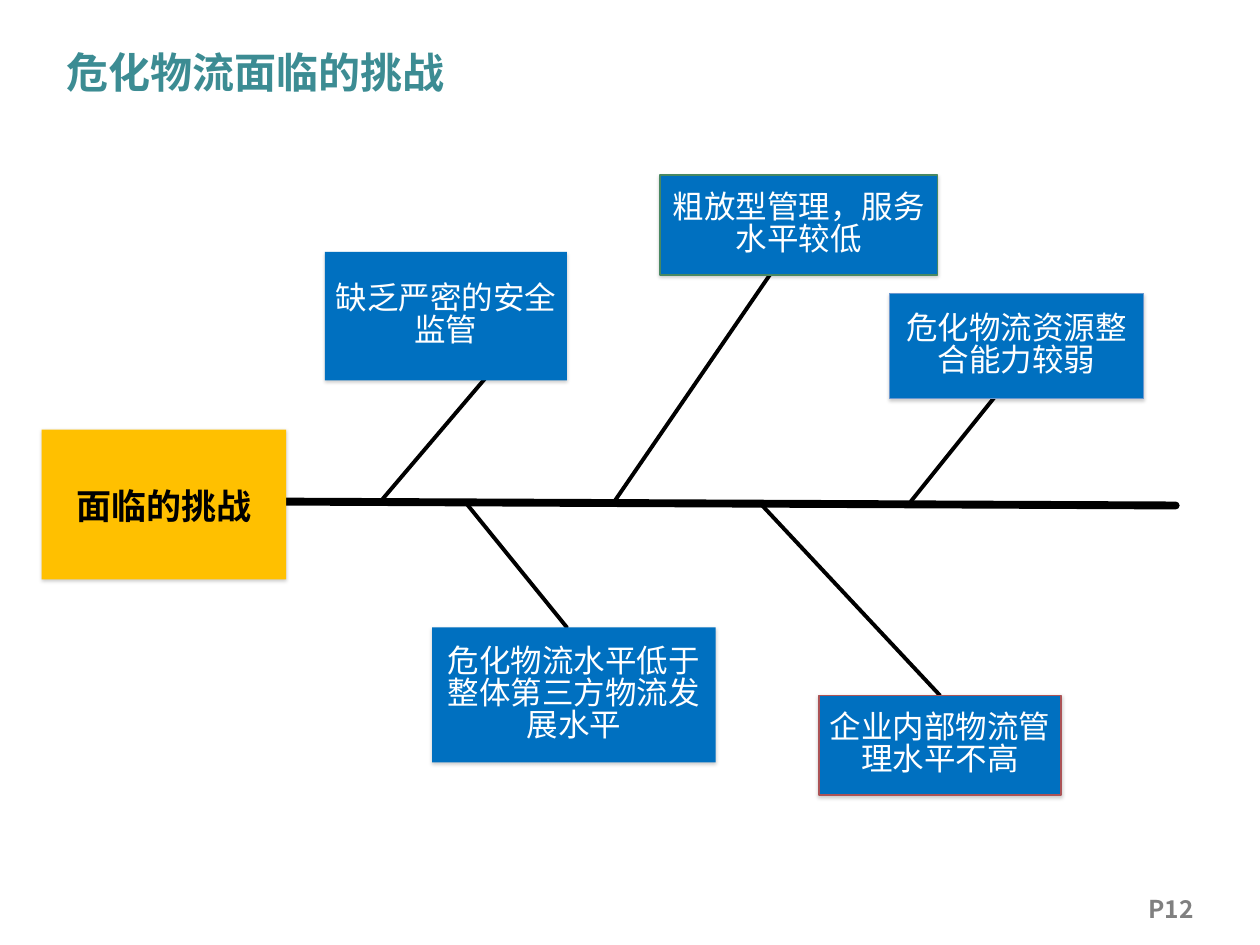
from lxml.etree import SubElement as Sub
from pptx import Presentation
from pptx.dml.color import RGBColor as RGB
from pptx.enum.shapes import MSO_CONNECTOR as CONN, MSO_SHAPE as SHAPE
from pptx.enum.text import MSO_ANCHOR as ANCHOR, PP_ALIGN as ALIGN
from pptx.oxml.ns import qn
from pptx.util import Cm, Pt

FONT = "Noto Sans CJK SC"
BLACK, WHITE = RGB(0, 0, 0), RGB(255, 255, 255)
TEAL, GRAY = RGB(0x3C, 0x8C, 0x93), RGB(0x80, 0x80, 0x80)
AMBER, BLUE = RGB(0xFF, 0xC0, 0), RGB(0, 0x70, 0xC0)
GREEN, RED = RGB(0x48, 0x88, 0x62), RGB(0xAC, 0x53, 0x56)
SKY = RGB(0x6B, 0x98, 0xCF)

# Content, lengths in cm
TITLE = "危化物流面临的挑战"
PAGE = "P12"
HEAD = ("面临的挑战", (0.84, 8.66, 4.93, 3.02))
SPINE = ((5.33, 10.11), (23.7, 10.19))
# Text, box, edge colour and width, rib end on the box (None: middle of top), rib end on the spine
CAUSES = [
    ("缺乏严密的安全监管", (6.55, 5.08, 4.88, 2.59), None, 0,
     (9.83, 7.57), (7.67, 10.11)),
    ("危化物流水平低于整体第三方物流发展水平", (8.71, 12.65, 5.72, 2.72), None, 0,
     (11.43, 12.65), (9.37, 10.11)),
    ("粗放型管理，服务水平较低", (13.31, 3.53, 5.59, 2.01), GREEN, 1,
     (15.54, 5.51), (12.37, 10.13)),
    ("企业内部物流管理水平不高", (16.51, 14.02, 4.88, 2.01), RED, 1,
     None, (15.29, 10.11)),
    ("危化物流资源整合能力较弱", (17.93, 5.92, 5.13, 2.11), SKY, 0.75,
     (20.32, 7.67), (18.36, 10.11)),
]


def write(shape, text, size, color, bold=False, align=ALIGN.CENTER,
          gap=None, inset=None):
    frame = shape.text_frame
    frame.word_wrap = True
    frame.vertical_anchor = ANCHOR.MIDDLE
    if inset is not None:
        frame.margin_left = frame.margin_right = Cm(inset)
        frame.margin_top = frame.margin_bottom = Cm(inset)
    para = frame.paragraphs[0]
    para.alignment = align
    if gap:
        para.line_spacing = gap
    run = para.add_run()
    run.text = text
    font = run.font
    font.name, font.size, font.bold = FONT, Pt(size), bold
    font.color.rgb = color
    Sub(run._r.get_or_add_rPr(), qn("a:ea"), typeface=FONT)


def add_box(place, fill, edge=None, width=0):
    box = slide.shapes.add_shape(SHAPE.RECTANGLE, *map(Cm, place))
    box.fill.solid()
    box.fill.fore_color.rgb = fill
    if edge is None:
        box.line.fill.background()
    else:
        box.line.color.rgb = edge
        box.line.width = Pt(width)
    # Soft shadow straight below
    box.shadow.inherit = False
    effects = box._element.spPr.find(qn("a:effectLst"))
    shade = Sub(effects, qn("a:outerShdw"), blurRad=str(Pt(2)),
                dist=str(Pt(1)), dir="5400000", rotWithShape="0")
    tone = Sub(shade, qn("a:srgbClr"), val="000000")
    Sub(tone, qn("a:alpha"), val="20000")
    return box


def add_line(start, end, width):
    line = slide.shapes.add_connector(CONN.STRAIGHT, *map(Cm, start + end))
    line.line.color.rgb = BLACK
    line.line.width = Pt(width)
    props = line._element.spPr
    props.find(qn("a:ln")).set("cap", "rnd")
    Sub(props, qn("a:effectLst"))
    return line


deck = Presentation()
deck.slide_width, deck.slide_height = Cm(25.4), Cm(19.05)
slide = deck.slides.add_slide(deck.slide_layouts[5])

# Title and page number
title = slide.shapes.title
title.left, title.top, title.width, title.height = map(Cm, (1.09, 0.43, 17.32, 2.03))
write(title, TITLE, 24, TEAL, bold=True, align=ALIGN.LEFT)
page = slide.shapes.add_textbox(*map(Cm, (22.81, 17.93, 1.6, 0.76)))
write(page, PAGE, 14, GRAY, bold=True)

# Spine and head
add_line(*SPINE, 4.5)
name, place = HEAD
write(add_box(place, AMBER), name, 20, BLACK, bold=True, gap=Pt(25), inset=0.05)

# Ribs, each behind its cause
for text, place, edge, width, tip, root in CAUSES:
    left, top, wide, _ = place
    rib = add_line(tip or (left + wide / 2, top), root, 2.25)
    box = add_box(place, BLUE, edge, width)
    write(box, text, 18, WHITE, gap=0.85, inset=0.05)
    if tip is None:
        rib.begin_connect(box, 0)

deck.save("out.pptx")
